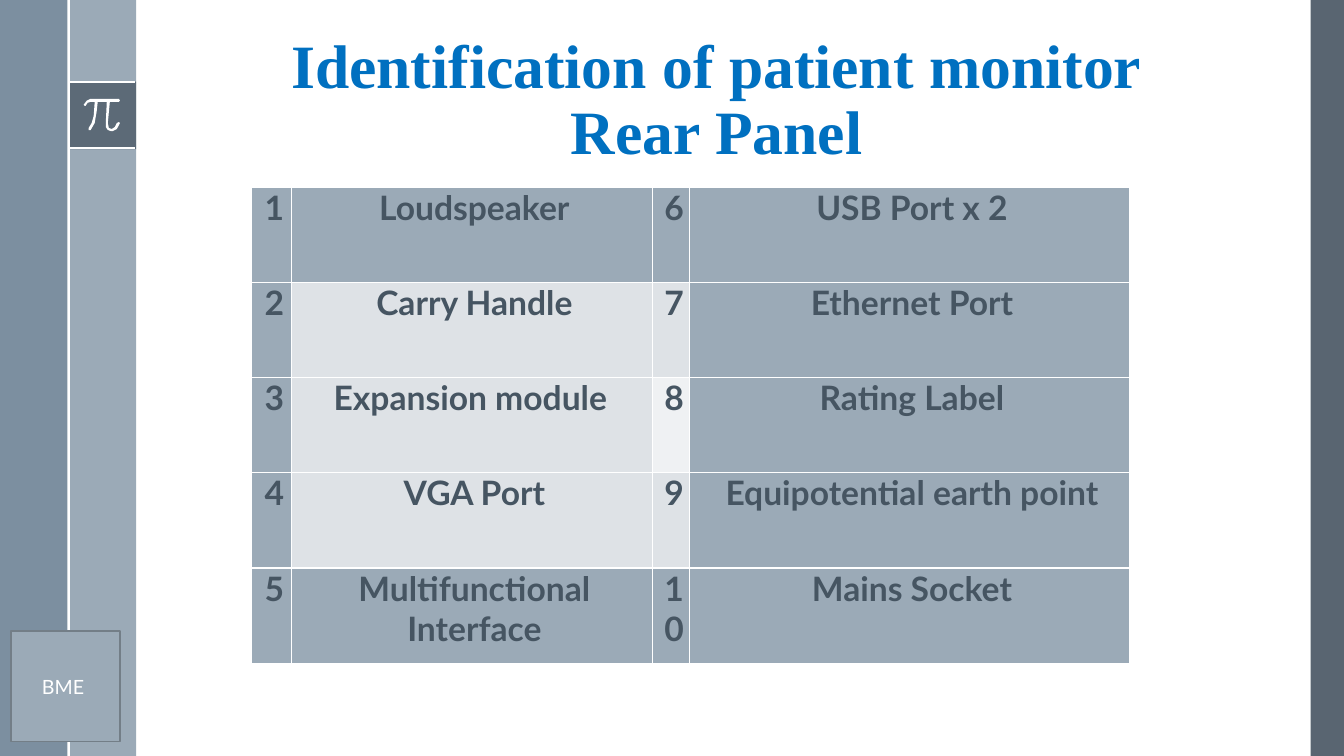
from lxml import etree
from pptx import Presentation
from pptx.dml.color import RGBColor
from pptx.enum.shapes import MSO_CONNECTOR, MSO_SHAPE
from pptx.enum.text import MSO_ANCHOR, MSO_AUTO_SIZE, PP_ALIGN
from pptx.oxml.ns import qn
from pptx.util import Inches, Pt

RECT = MSO_SHAPE.RECTANGLE
STRAIGHT = MSO_CONNECTOR.STRAIGHT
CENTER = PP_ALIGN.CENTER
MIDDLE, BOTTOM = MSO_ANCHOR.MIDDLE, MSO_ANCHOR.BOTTOM
NO_FIT = MSO_AUTO_SIZE.NONE

WHITE = RGBColor(0xFF, 0xFF, 0xFF)
BLUE = RGBColor(0x00, 0x70, 0xC0)
SLATE = RGBColor(0x47, 0x55, 0x62)
INK = RGBColor(0x46, 0x55, 0x62)
STEEL = RGBColor(0x6A, 0x80, 0x93)
MIST = RGBColor(0x9B, 0xAA, 0xB7)
EDGE = RGBColor(0x73, 0x7E, 0x87)
PALE = RGBColor(0xDE, 0xE2, 0xE6)
LIGHT = RGBColor(0xEF, 0xF1, 0xF3)

# Outline of the pi sign, in hundredths of an inch
PI_SIGN = [
    (118, 98), (90, 98), (86, 100), (83, 104), (84, 105), (85, 105),
    (87, 102), (90, 101), (94, 101), (93, 115), (91, 222 - 100), (88, 127),
    (88, 129), (90, 129), (94, 122), (96, 110), (97, 101), (106, 101),
    (105, 122), (105, 126), (107, 129), (110, 130), (112, 130), (116, 128),
    (119, 122), (118, 121), (116, 122), (114, 126), (111, 128), (108, 127),
    (107, 122), (109, 101), (118, 101), (119, 100),
]

WIDTHS = [0.4, 3.58, 0.37, 4.36]
INDENTS = [0.06, 0.05, 0.06, 0.05]
PARTS = [
    ("1", "Loudspeaker", "6", "USB Port x 2"),
    ("2", "Carry Handle", "7", "Ethernet Port"),
    ("3", "Expansion module ", "8", "Rating Label"),
    ("4", "VGA Port", "9", "Equipotential earth point"),
    ("5", "Multifunctional Interface", "10", "Mains Socket"),
]
# Fills of the two middle columns, row by row
MIDDLES = [(MIST, MIST), (PALE, PALE), (PALE, LIGHT), (PALE, PALE), (MIST, MIST)]


def put_text(frame, text, font="Lato", size=24, color=INK, bold=False,
             indent=0, spacing=None):
    para = frame.paragraphs[0]
    para.text = text
    para.alignment = CENTER
    if spacing:
        para.line_spacing = spacing
    if indent:
        props = para._p.get_or_add_pPr()
        props.set("marL", str(Inches(indent)))
        props.set("indent", "0")
    for run in para.runs:
        run.font.name = font
        run.font.size = Pt(size)
        run.font.bold = bold
        run.font.color.rgb = color


def paint(shape, color, alpha=100, edge=None):
    shape.shadow.inherit = False
    shape.fill.solid()
    shape.fill.fore_color.rgb = color
    if alpha < 100:
        tint = shape._element.spPr.find(".//" + qn("a:srgbClr"))
        etree.SubElement(tint, qn("a:alpha")).set("val", str(alpha * 1000))
    if edge is None:
        shape.line.fill.background()
    else:
        shape.line.color.rgb = edge
        shape.line.width = Pt(1)


def add_box(slide, left, top, width, height, color, alpha=100, edge=None):
    box = slide.shapes.add_shape(RECT, Inches(left), Inches(top),
                                 Inches(width), Inches(height))
    paint(box, color, alpha, edge)
    return box


def add_rule(slide, x1, y1, x2, y2):
    rule = slide.shapes.add_connector(STRAIGHT, Inches(x1), Inches(y1),
                                      Inches(x2), Inches(y2))
    rule.line.color.rgb = WHITE
    rule.line.width = Pt(1.5)
    etree.SubElement(rule._element.spPr, qn("a:effectLst"))


def add_sign(slide):
    pen = slide.shapes.build_freeform(*PI_SIGN[0], scale=Inches(0.01))
    pen.add_line_segments(PI_SIGN[1:], close=True)
    paint(pen.convert_to_shape(), WHITE)


def set_title(slide, text):
    title = slide.shapes.title
    title.left, title.top = Inches(1.76), Inches(0.36)
    title.width, title.height = Inches(10.7), Inches(1.36)
    frame = title.text_frame
    frame.word_wrap = True
    frame.auto_size = NO_FIT
    frame.vertical_anchor = BOTTOM
    put_text(frame, text, font="Times New Roman", size=44, color=BLUE,
             bold=True, spacing=0.9)


def set_edges(cell):
    props = cell._tc.get_or_add_tcPr()
    for side in ("lnL", "lnR", "lnT", "lnB"):
        line = etree.SubElement(props, qn("a:" + side), w=str(Pt(1)))
        fill = etree.SubElement(line, qn("a:solidFill"))
        etree.SubElement(fill, qn("a:srgbClr"), val=str(WHITE))


def fill_cell(cell, text, color, indent):
    cell.margin_left = cell.margin_right = 0
    cell.margin_top = cell.margin_bottom = 0
    set_edges(cell)
    cell.fill.solid()
    cell.fill.fore_color.rgb = color
    put_text(cell.text_frame, text, bold=True, indent=indent)


def add_parts(slide):
    frame = slide.shapes.add_table(len(PARTS), len(WIDTHS), Inches(2.49),
                                   Inches(1.86), Inches(sum(WIDTHS)), Inches(4.72))
    table = frame.table
    table.first_row = table.horz_banding = False
    for column, width in zip(table.columns, WIDTHS):
        column.width = Inches(width)
    for r, (texts, pair) in enumerate(zip(PARTS, MIDDLES)):
        colors = (MIST, *pair, MIST)
        for c, (text, color, indent) in enumerate(zip(texts, colors, INDENTS)):
            fill_cell(table.cell(r, c), text, color, indent)


def main():
    deck = Presentation()
    deck.slide_width, deck.slide_height = Inches(13.33), Inches(7.5)
    slide = deck.slides.add_slide(deck.slide_layouts[5])

    # Side bands
    add_box(slide, 13, 0, 0.33, 7.5, SLATE, alpha=90)
    add_box(slide, 0.68, 0, 0.67, 7.5, MIST)
    add_box(slide, 0, 0, 0.67, 7.5, STEEL, alpha=88)

    # Pi badge
    add_box(slide, 0.68, 0.81, 0.67, 0.67, SLATE, alpha=75)
    for y in (0.81, 1.47):
        add_rule(slide, 0.68, y, 1.34, y)
    add_sign(slide)
    add_rule(slide, 0.68, 0, 0.68, 7.5)

    # Title and table
    set_title(slide, "Identification of patient monitor\vRear Panel")
    add_parts(slide)

    # Corner label
    label = add_box(slide, 0.11, 6.26, 1.08, 1.1, MIST, edge=EDGE)
    label.text_frame.vertical_anchor = MIDDLE
    put_text(label.text_frame, "BME ", size=14, color=WHITE)

    deck.save("out.pptx")


if __name__ == "__main__":
    main()
